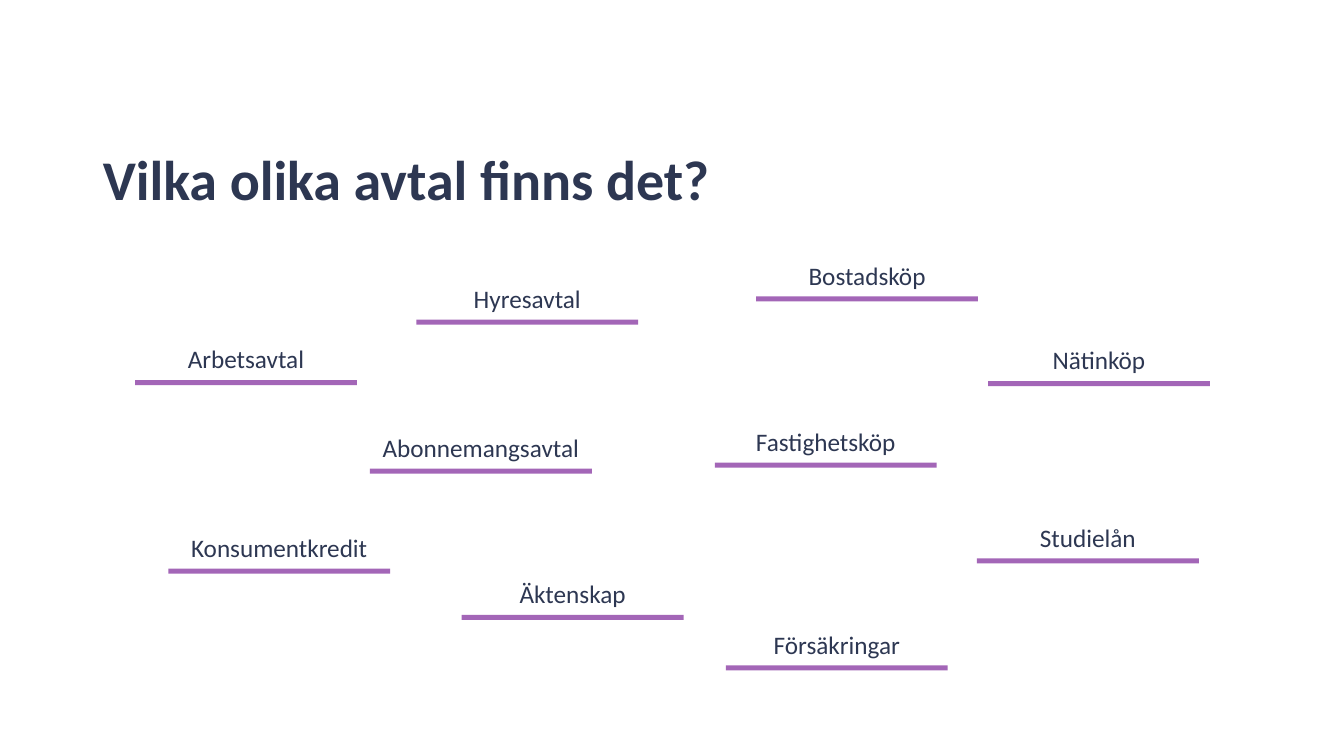
from dataclasses import dataclass

from pptx import Presentation
from pptx import util as u
from pptx.dml.color import RGBColor
from pptx.enum import shapes, text


@dataclass(frozen=True)
class Theme:
    """Colours, font and type sizes of the slide."""
    ink: RGBColor = RGBColor.from_string("2D3752")
    accent: RGBColor = RGBColor.from_string("A366B7")
    font: str = "Calibri"
    title_size: int = 40
    label_size: int = 18


THEME = Theme()
TITLE_BOX = (0.92, 1.08, 11.5, 1.45)
LABEL_W, LABEL_H = 2.2, 0.4
RULE_OFFSET, RULE_H = 0.41, 0.05
CONTRACTS = [
    ("Nätinköp", 9.8, 3.37),
    ("Abonnemangsavtal", 3.67, 4.24),
    ("Konsumentkredit", 1.67, 5.23),
    ("Studielån", 9.69, 5.13),
    ("Äktenskap", 4.58, 5.69),
    ("Fastighetsköp", 7.09, 4.18),
    ("Försäkringar", 7.2, 6.19),
    ("Hyresavtal", 4.13, 2.76),
    ("Arbetsavtal", 1.34, 3.36),
    ("Bostadsköp", 7.5, 2.53),
]


def set_attrs(obj, values):
    """Set each attribute of obj from a dict."""
    for name, value in values.items():
        setattr(obj, name, value)


def write(tf, content, align, size, bold=False):
    """Write one formatted paragraph into a text frame."""
    p = tf.paragraphs[0]
    p.alignment = align
    r = p.add_run()
    r.text = content
    set_attrs(r.font, {"name": THEME.font, "size": u.Pt(size), "bold": bold})
    r.font.color.rgb = THEME.ink
    return p


def add_title(s, box, content):
    """Place the title placeholder in its box and fill it."""
    sp = s.shapes.title
    left, top, width, height = map(u.Inches, box)
    set_attrs(sp, {"left": left, "top": top, "width": width, "height": height})
    set_attrs(sp.text_frame, {"word_wrap": True, "vertical_anchor": text.MSO_ANCHOR.MIDDLE})
    p = write(sp.text_frame, content, text.PP_ALIGN.LEFT, THEME.title_size, True)
    p.line_spacing = 0.9


def add_contract(s, box, content):
    """Add a centred label with a coloured rule beneath it."""
    left, top, width, height = box
    sp = s.shapes.add_textbox(*map(u.Inches, box))
    set_attrs(sp.text_frame, {"word_wrap": True, "auto_size": text.MSO_AUTO_SIZE.SHAPE_TO_FIT_TEXT})
    write(sp.text_frame, content, text.PP_ALIGN.CENTER, THEME.label_size)
    rule = s.shapes.add_shape(
        shapes.MSO_SHAPE.RECTANGLE,
        *map(u.Inches, (left, top + RULE_OFFSET, width, RULE_H)))
    rule.shadow.inherit = False
    rule.fill.solid()
    rule.fill.fore_color.rgb = THEME.accent
    rule.line.fill.background()


def main():
    """Build and save the slide."""
    prs = Presentation()
    set_attrs(prs, {"slide_width": u.Inches(13.33), "slide_height": u.Inches(7.5)})
    s = prs.slides.add_slide(prs.slide_layouts[5])
    add_title(s, TITLE_BOX, "Vilka olika avtal finns det?")
    for name, left, top in CONTRACTS:
        add_contract(s, (left, top, LABEL_W, LABEL_H), name)
    prs.save("out.pptx")


if __name__ == "__main__":
    main()
